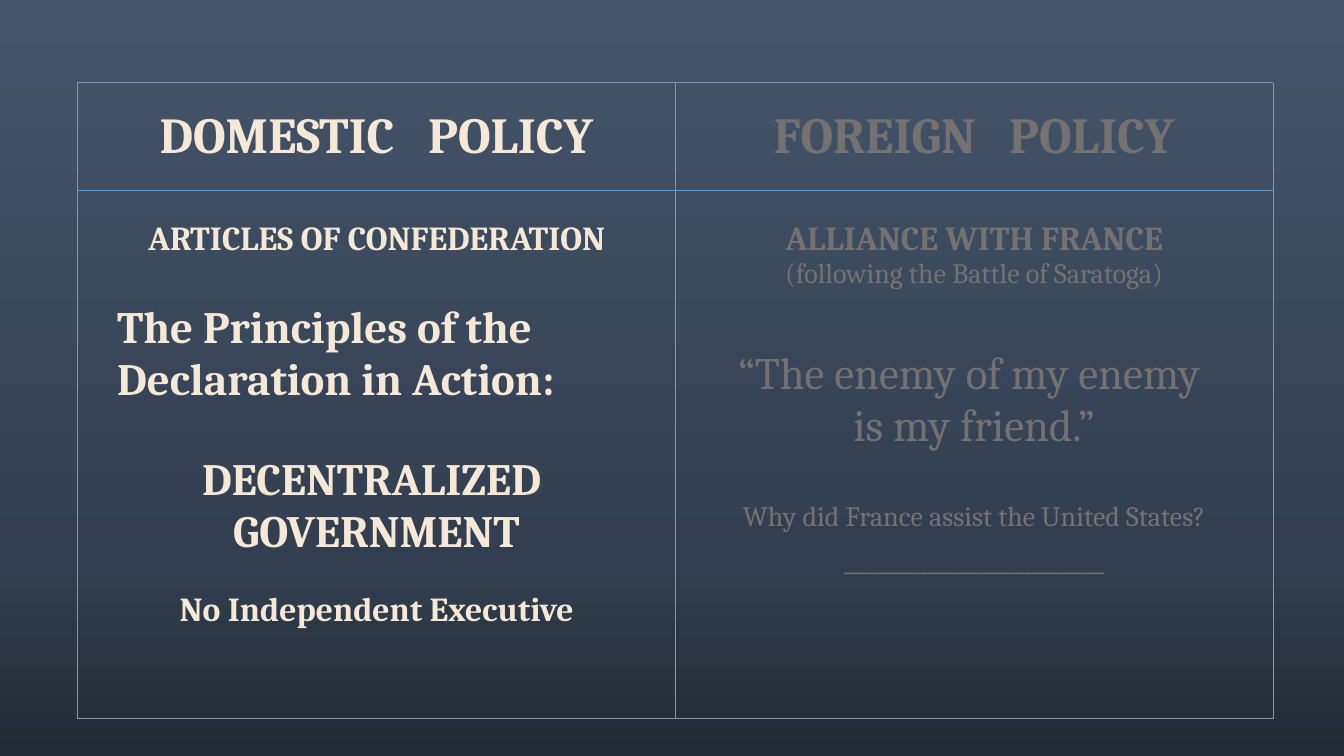
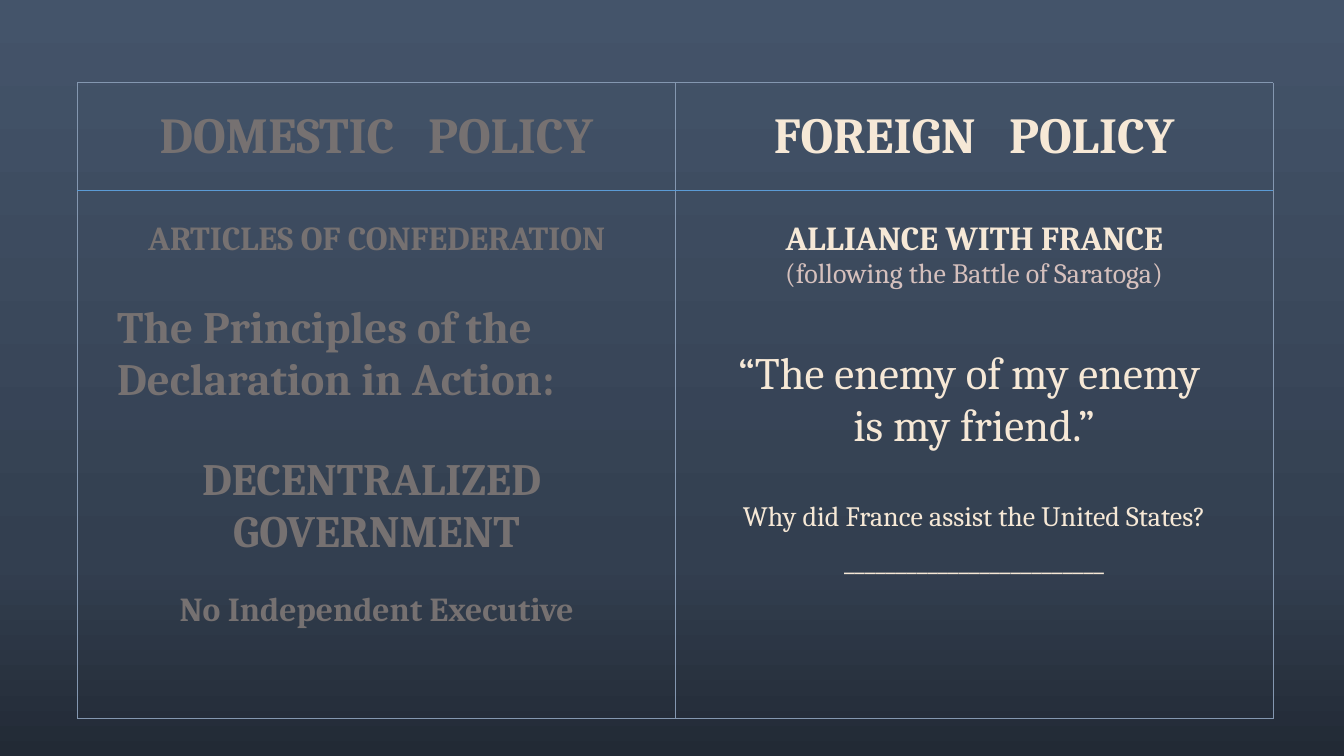
from dataclasses import dataclass

from lxml.etree import SubElement
from copy import deepcopy
from pptx import Presentation
from pptx.dml.color import RGBColor
from pptx.enum.text import MSO_ANCHOR, PP_ALIGN
from pptx.oxml.ns import qn
from pptx.util import Cm, Pt


@dataclass(frozen=True)
class Theme:
    font: str = "Cambria"
    active: str = "F6E8D6"
    active_note: str = "D5C0BD"
    muted: str = "767171"
    grid: str = "8497B0"
    rule: str = "5B9BD5"
    background: tuple = ((0, "44546A"), (0.74, "333F50"), (1, "222A35"))
    heading: int = 36
    statement: int = 32
    topic: int = 24
    note: int = 20


THEME = Theme()


@dataclass(frozen=True)
class Line:
    text: str
    size: int
    before: int = 0
    bold: bool = True
    indented: bool = False
    note: bool = False


HEADINGS = ("DOMESTIC POLICY", "FOREIGN POLICY")
COLUMNS = (
    (
        Line("ARTICLES OF CONFEDERATION", THEME.topic),
        Line("The Principles of the \vDeclaration in Action:", THEME.statement, 32, indented=True),
        Line("DECENTRALIZED ", THEME.statement, 35),
        Line("GOVERNMENT", THEME.statement),
        Line("No Independent Executive", THEME.topic, 23),
    ),
    (
        Line("ALLIANCE WITH FRANCE", THEME.topic),
        Line("(following the Battle of Saratoga)", THEME.note, bold=False, note=True),
        Line("“The enemy of my enemy \vis my friend.”", THEME.statement, 42, bold=False),
        Line("Why did France assist the United States?", THEME.note, 35, bold=False),
        Line("_" * 25, THEME.note, 9, bold=False),
    ),
)


class Deck:
    def __init__(self, theme):
        self.theme = theme
        self.prs = Presentation()
        self.prs.slide_width, self.prs.slide_height = Cm(33.87), Cm(19.05)
        self.s = None
        self.paint_background()

    def paint_background(self):
        """Put the vertical gradient on the master, for all slides."""
        master = self.prs.slide_master
        fill = master.background.fill
        fill.gradient()
        fill.gradient_angle = 270
        stops = next(master.element.iter(qn("a:gsLst")))
        stops.append(deepcopy(stops[-1]))
        for stop, (position, color) in zip(fill.gradient_stops, self.theme.background):
            stop.position = position
            stop.color.rgb = RGBColor.from_string(color)

    def add_slide(self):
        self.s = self.prs.slides.add_slide(self.prs.slide_layouts[6])

    def style_run(self, r, size, color, bold):
        r.font.name = self.theme.font
        r.font.size = Pt(size)
        r.font.bold = bold
        r.font.color.rgb = RGBColor.from_string(color)

    def border(self, cell, sides):
        """Draw the cell borders; sides lists (tag, colour, points)."""
        tc_pr = cell._tc.get_or_add_tcPr()
        for index, (side, color, width) in enumerate(sides):
            ln = SubElement(tc_pr, qn(f"a:{side}"), w=str(Pt(width)))
            fill = SubElement(ln, qn("a:solidFill"))
            SubElement(fill, qn("a:srgbClr"), val=color)
            tc_pr.insert(index, ln)

    def heading(self, cell, text, color):
        cell.vertical_anchor = MSO_ANCHOR.MIDDLE
        p = cell.text_frame.paragraphs[0]
        p.alignment = PP_ALIGN.CENTER
        first, second = text.split()
        for part in (first, " ", second):
            r = p.add_run()
            r.text = part
            self.style_run(r, self.theme.heading, color, True)
            if part == " ":
                # Widen the gap between the two words
                r.font._element.set("spc", "1600")

    def body(self, cell, lines, active):
        t = self.theme
        cell.margin_top = Cm(0.74)
        tf = cell.text_frame
        for i, line in enumerate(lines):
            p = tf.add_paragraph() if i else tf.paragraphs[0]
            p.text = line.text
            p.space_before = Pt(line.before)
            p.alignment = PP_ALIGN.LEFT if line.indented else PP_ALIGN.CENTER
            if line.indented:
                p._p.get_or_add_pPr().set("marL", str(Cm(0.81)))
            bright = t.active_note if line.note else t.active
            for r in p.runs:
                self.style_run(r, line.size, bright if active else t.muted, line.bold)

    def policy_table(self, active_column):
        t = self.theme
        frame = self.s.shapes.add_table(2, 2, Cm(1.96), Cm(2.09), Cm(30.12), Cm(16.02))
        table = frame.table
        table.first_row = table.horz_banding = False
        table.rows[0].height, table.rows[1].height = Cm(2.71), Cm(13.31)
        thin, thick = (t.grid, 0.75), (t.rule, 1.5)

        # Cell frames: a strong rule between the headings and the body
        for row in range(2):
            for col in range(2):
                cell = table.cell(row, col)
                cell.fill.background()
                cell.margin_left = cell.margin_right = Cm(0.18)
                cell.margin_top = cell.margin_bottom = 0
                top, bottom = (thick, thin) if row else (thin, thick)
                self.border(cell, (("lnL", *thin), ("lnR", *thin),
                                   ("lnT", *top), ("lnB", *bottom)))

        # Text: only the active column is bright
        for col, (title, lines) in enumerate(zip(HEADINGS, COLUMNS)):
            active = col == active_column
            self.heading(table.cell(0, col), title, t.active if active else t.muted)
            self.body(table.cell(1, col), lines, active)


def main():
    deck = Deck(THEME)
    for active_column in range(len(HEADINGS)):
        deck.add_slide()
        deck.policy_table(active_column)
    deck.prs.save("out.pptx")


if __name__ == "__main__":
    main()
